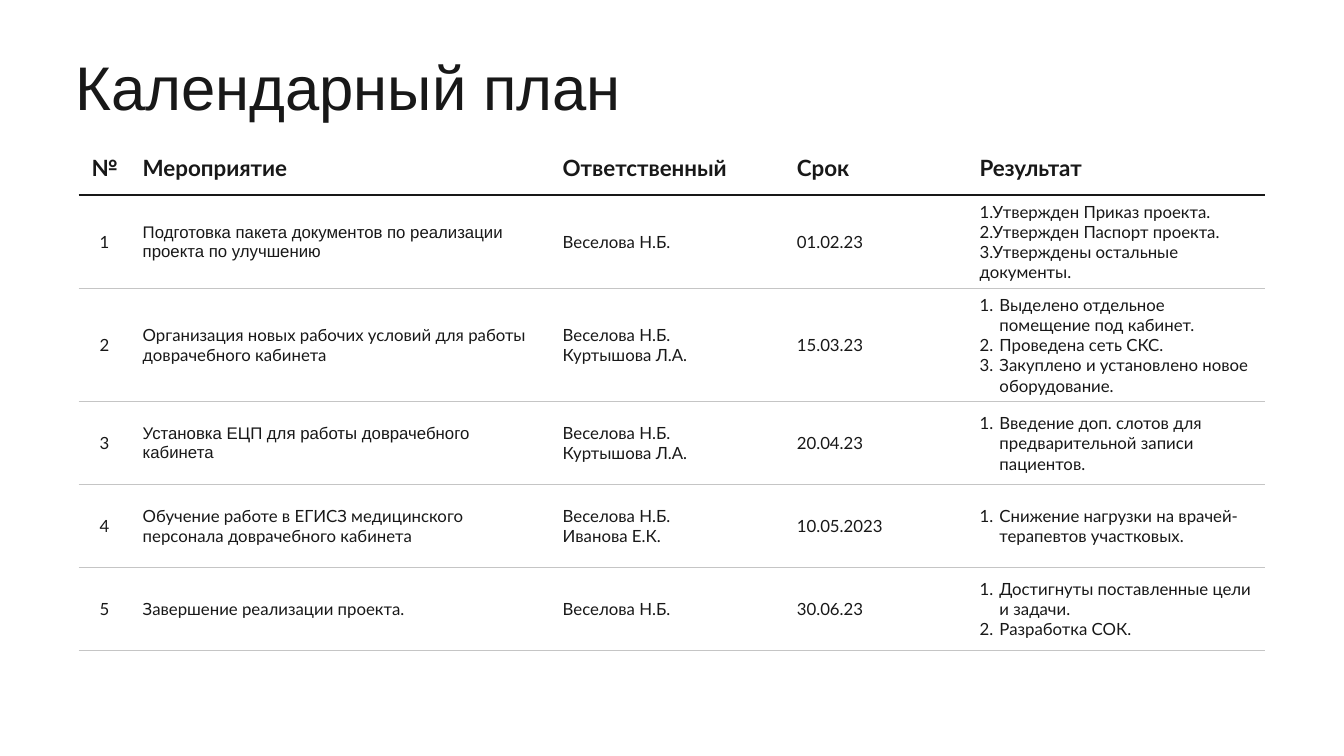
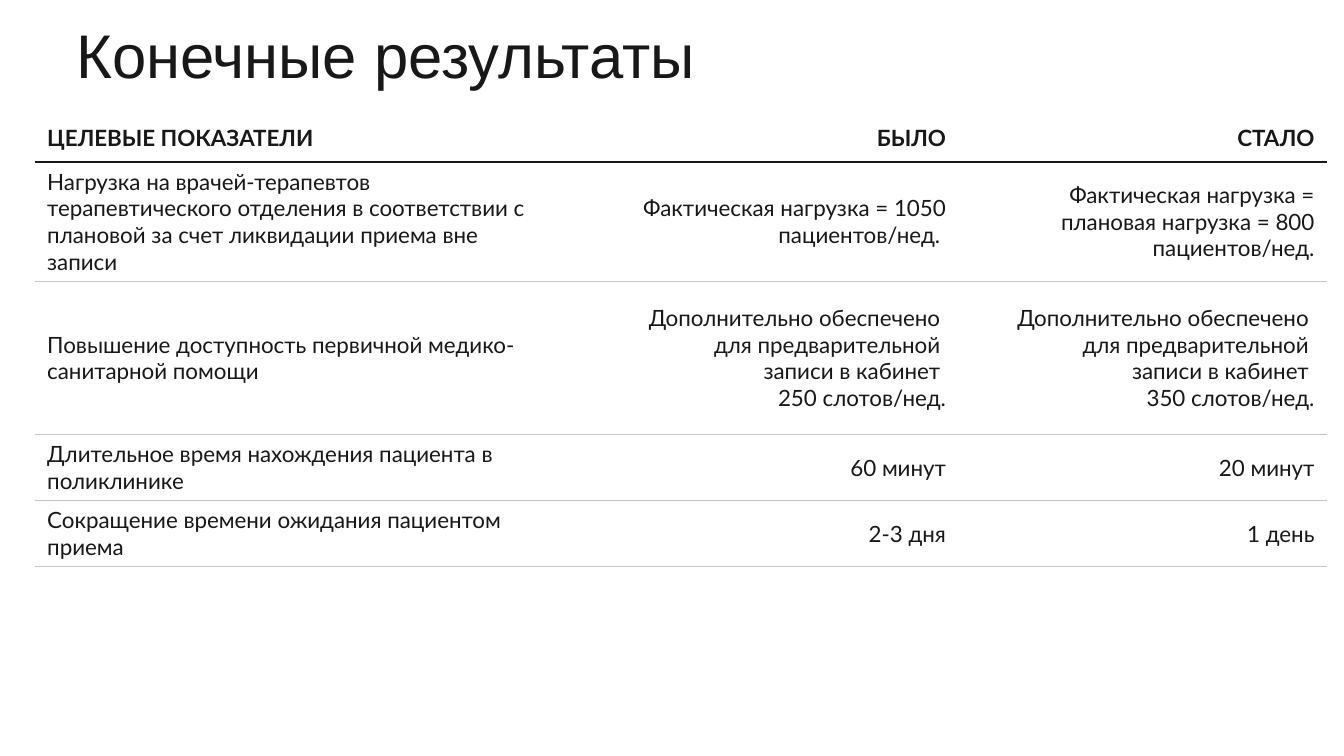
"""Builds two slides: a project calendar plan and its final results."""
from dataclasses import dataclass

import lxml.etree
import pptx
import pptx.dml.color
import pptx.enum.text
import pptx.oxml.ns
import pptx.util

ALIGN = pptx.enum.text.PP_ALIGN
ANCHOR = pptx.enum.text.MSO_ANCHOR
EMU_PER_PX = 9525
PLAIN_TABLE_STYLE = "{2D5ABB26-0587-4C30-8999-92F81FD0307C}"


@dataclass(frozen=True)
class Theme:
    """Colours, fonts, type sizes and table measures shared by the slides."""

    ink: str = "181818"
    rule: str = "C5C5C5"
    paper: str = "FFFFFF"
    title_font: str = "Arial"
    body_font: str = "Lato"
    title_size: int = 44
    head_size: int = 16
    rule_width: float = 1
    head_rule_width: float = 1.5
    inset_x: int = 12
    inset_y: int = 6
    number_indent: int = 19


THEME = Theme()


@dataclass(frozen=True)
class Column:
    """A table column: heading, width and alignments."""

    heading: str
    width: int
    align: ALIGN = ALIGN.LEFT
    head_align: ALIGN = ALIGN.LEFT


@dataclass(frozen=True)
class Cell:
    """The text of one body cell, one paragraph a line."""

    text: str
    font: str = THEME.body_font
    numbered: bool = False


@dataclass(frozen=True)
class TablePage:
    """A slide with a title above one ruled table."""

    title: str
    title_at: tuple[int, int]
    table_at: tuple[int, int]
    columns: list[Column]
    row_heights: list[int]
    rows: list[list[Cell]]
    body_size: int


def px(length: int) -> pptx.util.Emu:
    """Turn px into EMU."""
    return pptx.util.Emu(length * EMU_PER_PX)


def add_numbering(para) -> None:
    """Give a paragraph an automatic number with a hanging indent."""
    properties = para._p.get_or_add_pPr()
    indent = px(THEME.number_indent)
    properties.set("marL", str(indent))
    properties.set("indent", str(-indent))
    lxml.etree.SubElement(
        properties, pptx.oxml.ns.qn("a:buAutoNum"), type="arabicPeriod"
    )


def write_text(
    frame,
    text: str,
    *,
    size: int,
    font: str = THEME.body_font,
    bold: bool = False,
    align: ALIGN = ALIGN.LEFT,
    line_spacing: float = 1.0,
    numbered: bool = False,
) -> None:
    """Fill a text frame with one formatted paragraph for each line."""
    for index, line in enumerate(text.split("\n")):
        para = frame.add_paragraph() if index else frame.paragraphs[0]
        para.alignment = align
        para.line_spacing = line_spacing
        if numbered:
            add_numbering(para)
        span = para.add_run()
        span.text = line
        span.font.name = font
        span.font.size = pptx.util.Pt(size)
        span.font.bold = bold
        span.font.color.rgb = pptx.dml.color.RGBColor.from_string(THEME.ink)


def add_rule(cell, edge: str, colour: str, width: float) -> None:
    """Draw a line on the top or bottom edge of a cell."""
    line = lxml.etree.SubElement(
        cell._tc.get_or_add_tcPr(),
        pptx.oxml.ns.qn(f"a:{edge}"),
        w=str(pptx.util.Pt(width)),
    )
    fill = lxml.etree.SubElement(line, pptx.oxml.ns.qn("a:solidFill"))
    lxml.etree.SubElement(fill, pptx.oxml.ns.qn("a:srgbClr"), val=colour)


def rule_cell(cell, row: int) -> None:
    """Rule a cell by its row: dark under the heading, light elsewhere."""
    dark = (THEME.ink, THEME.head_rule_width)
    light = (THEME.rule, THEME.rule_width)
    if row > 0:
        add_rule(cell, "lnT", *(dark if row == 1 else light))
    add_rule(cell, "lnB", *(light if row else dark))


def format_cell(cell, row: int) -> None:
    """Set the margins, anchor, rules and empty fill of a cell."""
    cell.margin_left = cell.margin_right = px(THEME.inset_x)
    cell.margin_top = cell.margin_bottom = px(THEME.inset_y)
    cell.vertical_anchor = ANCHOR.MIDDLE
    rule_cell(cell, row)
    cell.fill.background()


def add_title(slide, page: TablePage) -> None:
    """Place and format the title placeholder."""
    box = slide.shapes.title
    left, top = page.title_at
    box.left, box.top, box.width, box.height = map(px, (left, top, 1216, 76))
    frame = box.text_frame
    frame.word_wrap = True
    frame.auto_size = pptx.enum.text.MSO_AUTO_SIZE.NONE
    frame.vertical_anchor = ANCHOR.MIDDLE
    write_text(
        frame,
        page.title,
        size=THEME.title_size,
        font=THEME.title_font,
        line_spacing=0.9,
    )


def add_ruled_table(slide, page: TablePage) -> None:
    """Add the table with its heading row and body rows."""
    left, top = page.table_at
    frame = slide.shapes.add_table(
        len(page.row_heights),
        len(page.columns),
        px(left),
        px(top),
        px(sum(column.width for column in page.columns)),
        px(sum(page.row_heights)),
    )
    table = frame.table
    table.horz_banding = False
    style = table._tbl.tblPr.find(pptx.oxml.ns.qn("a:tableStyleId"))
    style.text = PLAIN_TABLE_STYLE
    for row, height in enumerate(page.row_heights):
        table.rows[row].height = px(height)
    for index, column in enumerate(page.columns):
        table.columns[index].width = px(column.width)
        heading = table.cell(0, index)
        format_cell(heading, 0)
        write_text(
            heading.text_frame,
            column.heading,
            size=THEME.head_size,
            bold=True,
            align=column.head_align,
        )
        for row, contents in enumerate(page.rows, start=1):
            cell, content = table.cell(row, index), contents[index]
            format_cell(cell, row)
            write_text(
                cell.text_frame,
                content.text,
                size=page.body_size,
                font=content.font,
                align=column.align,
                numbered=content.numbered,
            )


def add_page(deck, page: TablePage) -> None:
    """Add one slide with a title and a table."""
    slide = deck.slides.add_slide(deck.slide_layouts.get_by_name("Title Only"))
    background = slide.background.fill
    background.solid()
    background.fore_color.rgb = pptx.dml.color.RGBColor.from_string(THEME.paper)
    add_title(slide, page)
    add_ruled_table(slide, page)


PLAN_STEPS = [
    [
        Cell("Подготовка пакета документов по реализации проекта по улучшению", "Arial"),
        Cell("Веселова Н.Б."),
        Cell("01.02.23"),
        Cell("1.Утвержден Приказ проекта.\n2.Утвержден Паспорт проекта.\n"
             "3.Утверждены остальные документы."),
    ],
    [
        Cell("Организация новых рабочих условий для работы доврачебного кабинета"),
        Cell("Веселова Н.Б.\nКуртышова Л.А."),
        Cell("15.03.23"),
        Cell("Выделено отдельное помещение под кабинет.\nПроведена сеть СКС.\n"
             "Закуплено и установлено новое оборудование.", numbered=True),
    ],
    [
        Cell("Установка ЕЦП для работы доврачебного кабинета", "Arial"),
        Cell("Веселова Н.Б.\nКуртышова Л.А."),
        Cell("20.04.23"),
        Cell("Введение доп. слотов для предварительной записи пациентов.", numbered=True),
    ],
    [
        Cell("Обучение работе в ЕГИСЗ медицинского персонала доврачебного кабинета"),
        Cell("Веселова Н.Б.\nИванова Е.К."),
        Cell("10.05.2023"),
        Cell("Снижение нагрузки на врачей-терапевтов участковых.", numbered=True),
    ],
    [
        Cell("Завершение реализации проекта."),
        Cell("Веселова Н.Б."),
        Cell("30.06.23"),
        Cell("Достигнуты поставленные цели и задачи.\nРазработка СОК.", numbered=True),
    ],
]

SLOTS = "Дополнительно обеспечено \nдля предварительной \nзаписи в кабинет \n{} слотов/нед."
RESULTS = [
    ("Нагрузка на врачей-терапевтов терапевтического отделения в соответствии "
     "с плановой за счет ликвидации приема вне записи",
     "Фактическая нагрузка = 1050 пациентов/нед. ",
     "Фактическая нагрузка = плановая нагрузка = 800 пациентов/нед."),
    ("Повышение доступность первичной медико-санитарной помощи",
     SLOTS.format(250), SLOTS.format(350)),
    ("Длительное время нахождения пациента в поликлинике", "60 минут", "20 минут"),
    ("Сокращение времени ожидания пациентом приема", "2-3 дня", "1 день"),
]

PAGES = [
    TablePage(
        title="Календарный план",
        title_at=(62, 48),
        table_at=(75, 133),
        columns=[
            Column("№", 49, ALIGN.CENTER),
            Column("Мероприятие", 400),
            Column("Ответственный", 223),
            Column("Срок", 174),
            Column("Результат", 284),
        ],
        row_heights=[53] + [79] * len(PLAN_STEPS),
        rows=[[Cell(str(n)), *step] for n, step in enumerate(PLAN_STEPS, start=1)],
        body_size=12,
    ),
    TablePage(
        title="Конечные результаты",
        title_at=(63, 18),
        table_at=(33, 109),
        columns=[
            Column("ЦЕЛЕВЫЕ ПОКАЗАТЕЛИ", 505),
            Column("БЫЛО", 375, ALIGN.RIGHT, ALIGN.RIGHT),
            Column("СТАЛО", 351, ALIGN.RIGHT, ALIGN.RIGHT),
        ],
        row_heights=[45, 103, 146, 63, 63],
        rows=[[Cell(text) for text in result] for result in RESULTS],
        body_size=16,
    ),
]


def main() -> None:
    """Build and save the deck."""
    deck = pptx.Presentation()
    deck.slide_width, deck.slide_height = px(1280), px(720)
    for page in PAGES:
        add_page(deck, page)
    deck.save("out.pptx")


if __name__ == "__main__":
    main()
